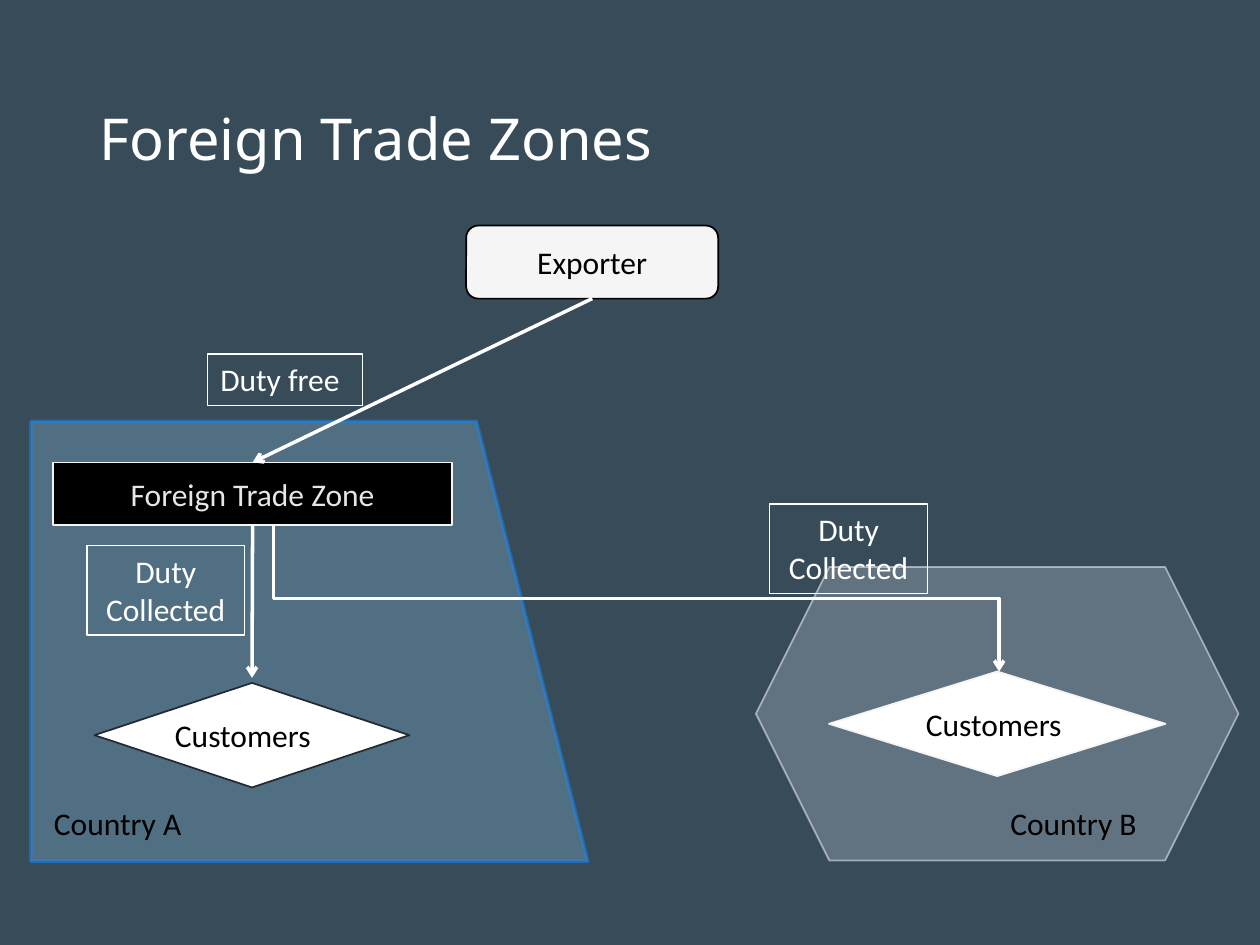
from lxml import etree
from pptx import Presentation
from pptx import util as u
from pptx.dml.color import RGBColor
from pptx.enum import shapes, text
from pptx.oxml.ns import qn

COLORS = {
    "background": "384B59", "white": "FFFFFF", "black": "000000",
    "pale": "F5F5F5", "zone_text": "E7E6E6", "navy": "222A35",
    "country_a": "9EDBFF", "country_a_line": "1489FF", "country_b": "DEEBF7",
}
SHAPE = shapes.MSO_SHAPE
LEFT, CENTER = text.PP_ALIGN.LEFT, text.PP_ALIGN.CENTER


def rgb(name):
    return RGBColor.from_string(COLORS[name])


def set_alpha(sp_fill, percent):
    """Make a solid fill partly transparent."""
    color = sp_fill.find(qn("a:solidFill"))[0]
    etree.SubElement(color, qn("a:alpha"), val=str(percent * 1000))


class Diagram:
    font, title_font = "Calibri", "Noto Sans"
    size, title_size = 18, 33

    def __init__(self, prs):
        self.slide = prs.slides.add_slide(prs.slide_layouts[5])
        fill = self.slide.background.fill
        fill.solid()
        fill.fore_color.rgb = rgb("background")

    def set_text(self, sp, words, color, align=CENTER, anchor=text.MSO_ANCHOR.MIDDLE,
                 font=None, size=None):
        tf = sp.text_frame
        tf.text = words
        tf.vertical_anchor = anchor
        for p in tf.paragraphs:
            p.alignment = align
            p.font.name = font or self.font
            p.font.size = u.Pt(size or self.size)
            p.font.color.rgb = rgb(color)
        return tf

    def title(self, words, box):
        sp = self.slide.shapes.title
        sp.left, sp.top, sp.width, sp.height = map(u.Inches, box)
        tf = self.set_text(sp, words, "white", LEFT, font=self.title_font,
                           size=self.title_size)
        tf.auto_size = text.MSO_AUTO_SIZE.NONE
        tf.paragraphs[0].line_spacing = 0.9

    def shape(self, kind, box, fill, line, width=1, words="", color="black"):
        sp = self.slide.shapes.add_shape(kind, *map(u.Inches, box))
        sp.shadow.inherit = False
        sp.fill.solid()
        sp.fill.fore_color.rgb = rgb(fill)
        sp.line.color.rgb = rgb(line)
        sp.line.width = u.Pt(width)
        if words:
            self.set_text(sp, words, color)
        return sp

    def country(self, kind, box, fill, line, width):
        sp = self.shape(kind, box, fill, line, width)
        props = sp._element.spPr
        set_alpha(props, 25)
        set_alpha(props.find(qn("a:ln")), 50)
        return sp

    def label(self, words, box, color="black", align=LEFT, framed=False):
        sp = self.slide.shapes.add_textbox(*map(u.Inches, box))
        tf = self.set_text(sp, words, color, align, text.MSO_ANCHOR.TOP)
        tf.word_wrap = False
        tf.auto_size = text.MSO_AUTO_SIZE.SHAPE_TO_FIT_TEXT
        if framed:
            sp.line.color.rgb = rgb("white")
            sp.line.width = u.Pt(0.75)

    def arrow(self, start, end, kind=shapes.MSO_CONNECTOR.STRAIGHT):
        cxn = self.slide.shapes.add_connector(kind, *map(u.Inches, start + end))
        cxn.line.color.rgb = rgb("white")
        cxn.line.width = u.Pt(2)
        props = cxn._element.spPr
        etree.SubElement(props.find(qn("a:ln")), qn("a:tailEnd"), type="arrow")
        etree.SubElement(props, qn("a:effectLst"))
        return cxn

    def down_across_down(self, start, end):
        """Elbow arrow that leaves and arrives vertically."""
        cxn = self.arrow(start, end, shapes.MSO_CONNECTOR.ELBOW)
        (x1, y1), (x2, y2) = start, end
        across, down = x2 - x1, y2 - y1
        cxn.left = u.Inches((x1 + x2 - down) / 2)
        cxn.top = u.Inches((y1 + y2 - across) / 2)
        cxn.width, cxn.height = u.Inches(down), u.Inches(across)
        xfrm = cxn._element.spPr.find(qn("a:xfrm"))
        xfrm.set("rot", str(270 * 60000))
        xfrm.set("flipH", "1")


def main():
    prs = Presentation()
    prs.slide_width, prs.slide_height = u.Inches(10), u.Inches(7.5)
    d = Diagram(prs)
    d.title("Foreign Trade Zones", (0.69, 0.4, 8.62, 1.45))

    exporter = d.shape(SHAPE.ROUNDED_RECTANGLE, (3.7, 1.79, 2, 0.58), "pale", "black",
                       words="Exporter")
    country_a = d.country(SHAPE.FLOWCHART_MANUAL_INPUT, (0.71, 2.88, 3.49, 4.42),
                          "country_a", "country_a_line", 2)
    country_a.rotation = 90
    d.country(SHAPE.HEXAGON, (6, 4.5, 3.83, 2.33), "country_b", "white", 1)
    zone = d.shape(SHAPE.RECTANGLE, (0.42, 3.67, 3.17, 0.5), "black", "pale",
                   words="Foreign Trade Zone", color="zone_text")
    d.shape(SHAPE.FLOWCHART_DECISION, (0.75, 5.42, 2.5, 0.83), "white", "navy")
    d.shape(SHAPE.FLOWCHART_DECISION, (6.58, 5.33, 2.67, 0.83), "white", "pale")

    to_zone = d.arrow((4.7, 2.4), (2, 3.63))
    to_zone.begin_connect(exporter, 2)
    to_zone.end_connect(zone, 0)
    to_customers = d.arrow((2, 4.19), (2, 5.38))
    to_customers.begin_connect(zone, 2)
    d.down_across_down((2.17, 4.17), (7.93, 5.33))

    for name, left in (("Country A", 0.33), ("Country B", 7.92)):
        d.label(name, (left, 6.33, 1.31, 0.4))
    d.label("Duty free", (1.65, 2.81, 1.23, 0.41), "white", framed=True)
    for left, top in ((0.69, 4.33), (6.11, 4)):
        d.label("Duty\nCollected", (left, top, 1.25, 0.71), "white", CENTER, framed=True)
    for left, top in ((1.29, 5.63), (7.25, 5.55)):
        d.label("Customers", (left, top, 1.42, 0.4))

    prs.save("out.pptx")


if __name__ == "__main__":
    main()
